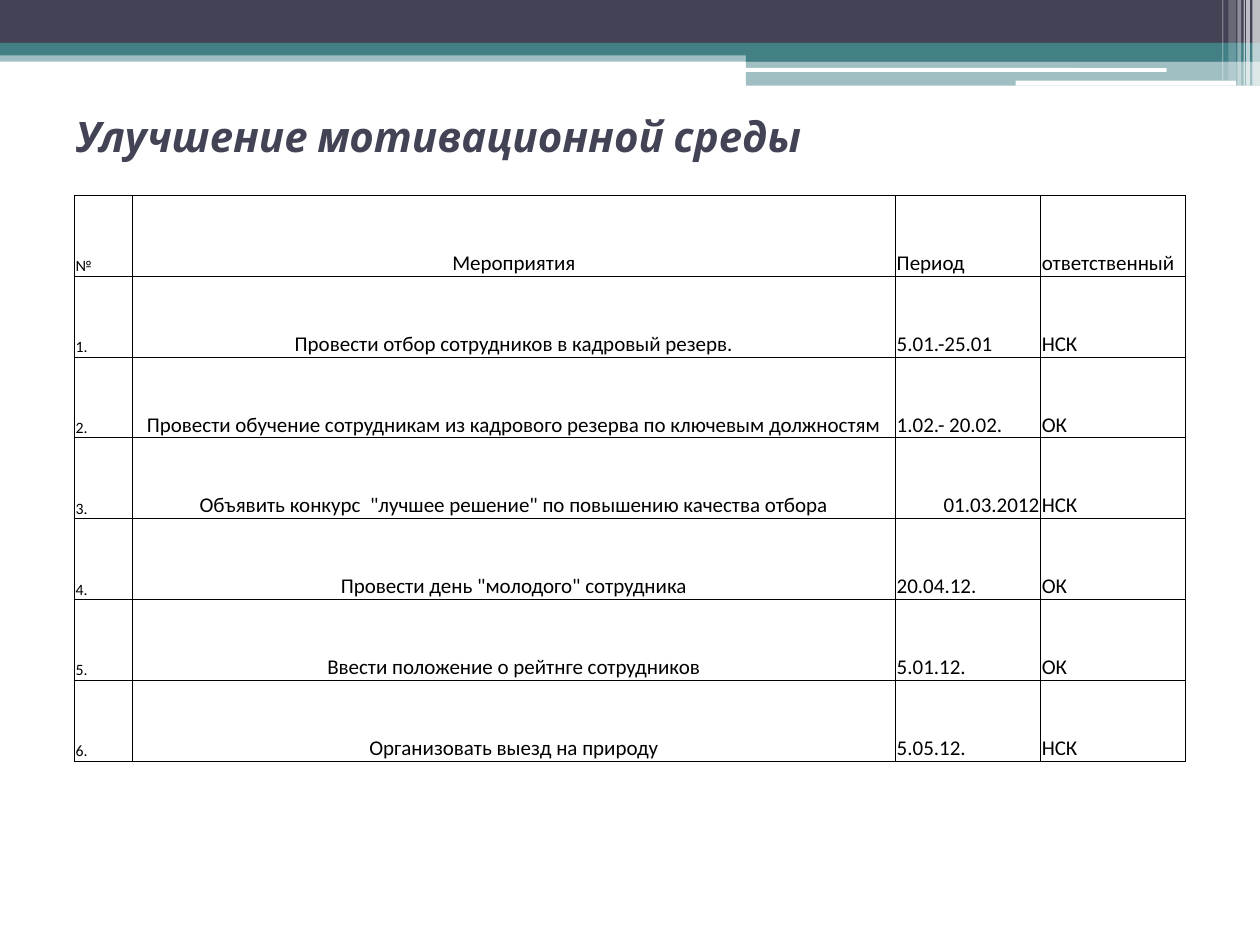
import pptx
import pptx.util
import pptx.dml.color
import pptx.enum.shapes
import pptx.enum.text
import pptx.oxml.ns
from lxml import etree

Inches = pptx.util.Inches
Pt = pptx.util.Pt
ALIGN = pptx.enum.text.PP_ALIGN
ANCHOR = pptx.enum.text.MSO_ANCHOR
SHAPE = pptx.enum.shapes.MSO_SHAPE
qn = pptx.oxml.ns.qn

COLORS = {"ink": "424456", "teal": "438086", "white": "FFFFFF", "black": "000000"}

# Header bands: left, top, width, height, colour, opacity in percent
BANDS = [
    (0, 0.4, 10, 0.09, "teal", 50),
    (0, 0, 10, 0.34, "ink", 100),
    (0, 0.34, 10, 0.1, "teal", 100),
    (5.92, 0.39, 4.08, 0.1, "teal", 100),
    (5.92, 0.48, 4.08, 0.2, "teal", 50),
]
# White rules under the bands: left, top, width, height
RULES = [(5.91, 0.54, 3.35, 0.03), (8.06, 0.64, 1.75, 0.04)]
# Light stripes at the right edge: left, width, height, opacity
STRIPES = [
    (9.94, 0.06, 0.68, 65),
    (9.89, 0.03, 0.68, 65),
    (9.87, 0.01, 0.68, 60),
    (9.82, 0.03, 0.68, 40),
    (9.75, 0.06, 0.64, 20),
    (9.7, 0.01, 0.64, 30),
]

HEADINGS = ("№", "Мероприятия", "Период", "ответственный")
ACTIVITIES = [
    ("Провести отбор сотрудников в кадровый резерв.", "5.01.-25.01", "НСК"),
    ("Провести обучение сотрудникам из кадрового резерва по ключевым должностям",
     "1.02.- 20.02.", "ОК"),
    ('Объявить конкурс  "лучшее решение" по повышению качества отбора',
     "01.03.2012", "НСК"),
    ('Провести день "молодого" сотрудника', "20.04.12.", "ОК"),
    ("Ввести положение о рейтнге сотрудников", "5.01.12.", "ОК"),
    ("Организовать выезд на природу", "5.05.12.", "НСК"),
]
COLUMN_SHARES = (0.46, 6.05, 1.15, 1.15)


def rgb(name):
    return pptx.dml.color.RGBColor.from_string(COLORS[name])


def write(frame, text, font="Calibri", size=12, color="black", bold=False,
          italic=False, align=ALIGN.LEFT):
    paragraph = frame.paragraphs[0]
    paragraph.alignment = align
    run = paragraph.add_run()
    run.text = text
    run.font.name = font
    run.font.size = Pt(size)
    run.font.bold = bold
    run.font.italic = italic
    run.font.color.rgb = rgb(color)


def add_bar(slide, box, color, opacity=100, kind=SHAPE.RECTANGLE):
    bar = slide.shapes.add_shape(kind, *map(Inches, box))
    bar.shadow.inherit = False
    bar.line.fill.background()
    bar.fill.solid()
    bar.fill.fore_color.rgb = rgb(color)
    if opacity < 100:
        fill_color = bar.fill._xPr.find(".//" + qn("a:srgbClr"))
        etree.SubElement(fill_color, qn("a:alpha"), val=str(opacity * 1000))


def add_header(slide, box):
    x, y = box
    for left, top, width, height, color, opacity in BANDS:
        add_bar(slide, (x + left, y + top, width, height), color, opacity)
    for left, top, width, height in RULES:
        add_bar(slide, (x + left, y + top, width, height), "white",
                kind=SHAPE.ROUNDED_RECTANGLE)
    for left, width, height, opacity in STRIPES:
        add_bar(slide, (x + left, y, width, height), "white", opacity)


def place_title(slide, box, text):
    title = slide.shapes.title
    title.left, title.top, title.width, title.height = map(Inches, box)
    frame = title.text_frame
    frame.word_wrap = True
    frame.vertical_anchor = ANCHOR.MIDDLE
    write(frame, text, font="Cabin", size=24, color="ink", bold=True, italic=True)


def add_borders(cell, color="black", width=0.5):
    properties = cell._tc.get_or_add_tcPr()
    for index, side in enumerate(("lnL", "lnR", "lnT", "lnB")):
        # Borders come before the fill in the cell properties
        line = etree.Element(qn(f"a:{side}"), w=str(Pt(width)))
        fill = etree.SubElement(line, qn("a:solidFill"))
        etree.SubElement(fill, qn("a:srgbClr"), val=COLORS[color])
        properties.insert(index, line)


def add_plan(slide, box):
    rows = [HEADINGS]
    rows += [(f"{number}.", *activity) for number, activity in enumerate(ACTIVITIES, 1)]
    left, top, width, height = box
    plan = slide.shapes.add_table(len(rows), len(HEADINGS), *map(Inches, box)).table
    plan.first_row = plan.horz_banding = False
    for column, share in zip(plan.columns, COLUMN_SHARES):
        column.width = Inches(width * share / sum(COLUMN_SHARES))
    for row, values in zip(plan.rows, rows):
        row.height = Inches(height / len(rows))
        for index, (cell, value) in enumerate(zip(row.cells, values)):
            cell.fill.background()
            cell.vertical_anchor = ANCHOR.BOTTOM
            cell.margin_left = cell.margin_right = cell.margin_top = Inches(0.01)
            cell.margin_bottom = 0
            align = ALIGN.CENTER if index == 1 else ALIGN.LEFT
            if value == "01.03.2012":  # the only full date is set to the right
                align = ALIGN.RIGHT
            write(cell.text_frame, value, size=9 if index == 0 else 12, align=align)
            add_borders(cell)


def main():
    deck = pptx.Presentation()
    deck.slide_width, deck.slide_height = Inches(10), Inches(7.5)
    slide = deck.slides.add_slide(deck.slide_layouts.get_by_name("Title Only"))
    add_header(slide, (0, 0))
    place_title(slide, (0.5, 0.76, 9, 0.63), "Улучшение мотивационной среды")
    add_plan(slide, (0.59, 1.55, 8.82, 4.49))
    deck.save("out.pptx")


if __name__ == "__main__":
    main()
